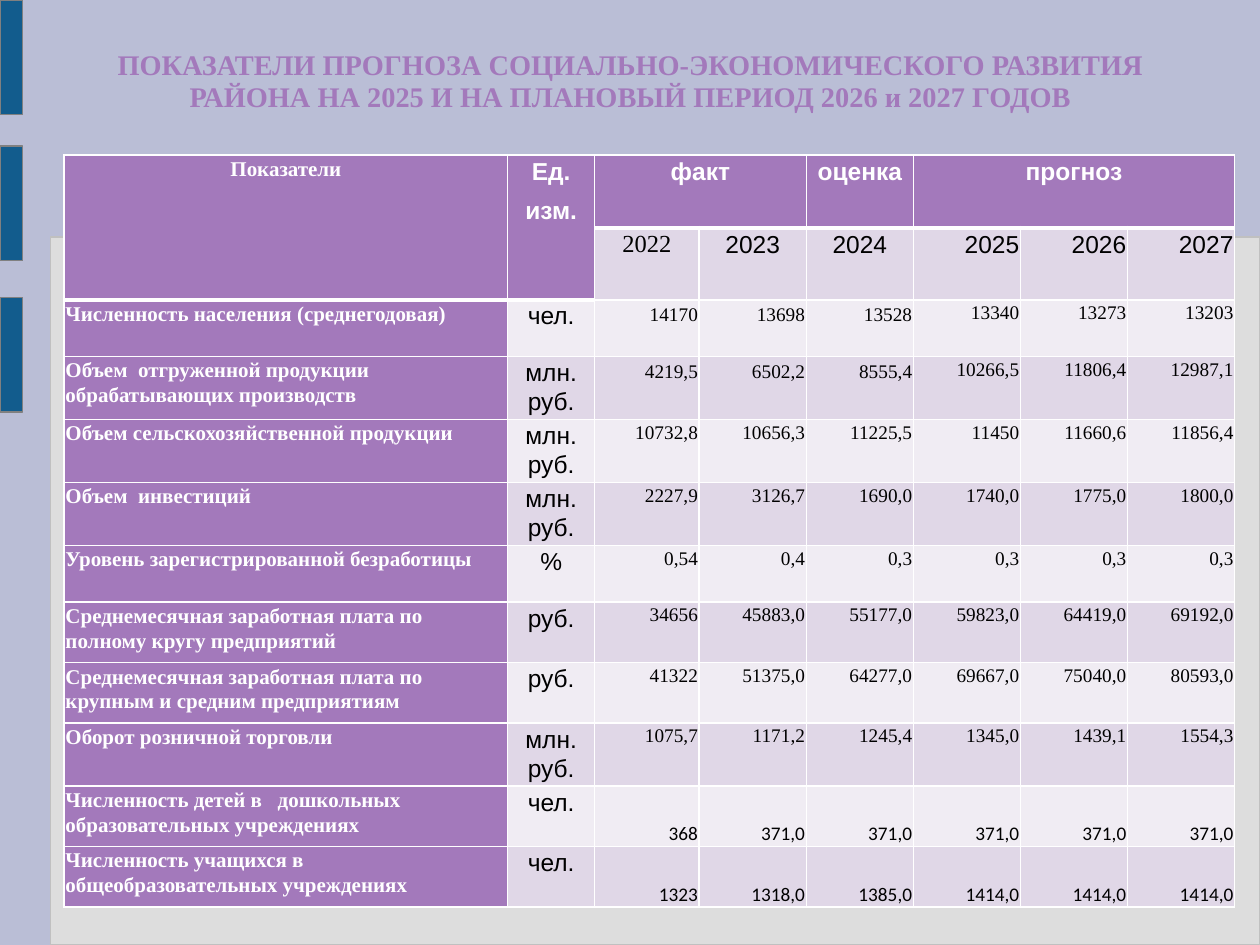
from lxml import etree
from pptx import Presentation
from pptx import util as u
from pptx.dml.color import RGBColor
from pptx.enum import shapes, text
from pptx.oxml import ns

SERIF, SANS, PLAIN = "Times New Roman", "Arial", "Calibri"
PURPLE, WHITE, BLACK = "A379BB", "FFFFFF", "000000"
BANDS = ["F0ECF3", "E0D7E7"]
LEFT, MID, RIGHT = text.PP_ALIGN.LEFT, text.PP_ALIGN.CENTER, text.PP_ALIGN.RIGHT
TOP, LOW = text.MSO_ANCHOR.TOP, text.MSO_ANCHOR.BOTTOM

TITLE = ("ПОКАЗАТЕЛИ ПРОГНОЗА СОЦИАЛЬНО-ЭКОНОМИЧЕСКОГО РАЗВИТИЯ "
         "РАЙОНА НА 2025 И НА ПЛАНОВЫЙ ПЕРИОД 2026 и 2027 ГОДОВ")
# first column, last column, last row, words
HEADS = [(0, 0, 1, "Показатели"), (1, 1, 1, "Ед.\nизм."), (2, 3, 0, "факт"),
         (4, 4, 0, "оценка"), (5, 7, 0, "прогноз")]
YEARS = ["2022", "2023", "2024", "2025", "2026", "2027"]
ROWS = [
    ("Численность населения (среднегодовая)", "чел.",
     "14170 13698 13528 13340 13273 13203"),
    ("Объем  отгруженной продукции обрабатывающих производств", "млн. руб.",
     "4219,5 6502,2 8555,4 10266,5 11806,4 12987,1"),
    ("Объем сельскохозяйственной продукции", "млн. руб.",
     "10732,8 10656,3 11225,5 11450 11660,6 11856,4"),
    ("Объем  инвестиций", "млн. руб.",
     "2227,9 3126,7 1690,0 1740,0 1775,0 1800,0"),
    ("Уровень зарегистрированной безработицы", "%",
     "0,54 0,4 0,3 0,3 0,3 0,3"),
    ("Среднемесячная заработная плата по полному кругу предприятий", "руб.",
     "34656 45883,0 55177,0 59823,0 64419,0 69192,0"),
    ("Среднемесячная заработная плата по крупным и средним предприятиям", "руб.",
     "41322 51375,0 64277,0 69667,0 75040,0 80593,0"),
    ("Оборот розничной торговли", "млн. руб.",
     "1075,7 1171,2 1245,4 1345,0 1439,1 1554,3"),
    ("Численность детей в   дошкольных образовательных учреждениях", "чел.",
     "368 371,0 371,0 371,0 371,0 371,0"),
    ("Численность учащихся в общеобразовательных учреждениях", "чел.",
     "1323 1318,0 1385,0 1414,0 1414,0 1414,0"),
]
# Grid units: the slide is 100 columns by 75 rows
WIDTHS = [35.2, 6.9, 8.3] + [8.5] * 5
HEIGHTS = [5.8, 5.7, 4.5, 5, 5, 5, 4.5, 4.8, 4.8, 5, 4.8, 4.8]


def rgb(code):
    return RGBColor.from_string(code)


def write(frame, words, size=11, font=SERIF, color=BLACK, bold=False,
          align=LEFT, lead=1.06, gap=3):
    """Fill a text frame, one paragraph for each line of words."""
    frame.text = words
    frame.word_wrap = True
    for para in frame.paragraphs:
        para.alignment, para.line_spacing = align, lead
        para.space_before = para.space_after = u.Pt(gap)
        for run in para.runs:
            face = run.font
            face.size, face.name, face.bold = u.Pt(size), font, bold
            face.color.rgb = rgb(color)


def edge(cell, side, width):
    """Draw one white border of a cell; side is L, R, T or B."""
    line = etree.SubElement(cell._tc.get_or_add_tcPr(), ns.qn("a:ln" + side),
                            w=str(u.Pt(width)))
    fill = etree.SubElement(line, ns.qn("a:solidFill"))
    etree.SubElement(fill, ns.qn("a:srgbClr"), val=WHITE)


def thick(row, col):
    """Tell whether the heading of this column ends below this row."""
    return row == (1 if col < 2 else 0)


class Page:
    def __init__(self, deck, back):
        self.wide, self.high = deck.slide_width, deck.slide_height
        self.slide = deck.slides.add_slide(deck.slide_layouts[5])
        self.slide.background.fill.solid()
        self.slide.background.fill.fore_color.rgb = rgb(back)

    def col(self, n):
        return round(self.wide * n / 100)

    def row(self, n):
        return round(self.high * n / 75)

    def area(self, x, y, w, h):
        return self.col(x), self.row(y), self.col(w), self.row(h)

    def panel(self, x, y, w, h, fill, line):
        box = self.slide.shapes.add_shape(
            shapes.MSO_SHAPE.ROUNDED_RECTANGLE, *self.area(x, y, w, h))
        box.adjustments[0] = 0
        box.shadow.inherit = False
        box.fill.solid()
        box.fill.fore_color.rgb = rgb(fill)
        box.line.color.rgb = rgb(line)
        box.line.width = u.Pt(0.75)

    def title(self, words, x, y, w, h):
        head = self.slide.shapes.title
        head.left, head.top, head.width, head.height = self.area(x, y, w, h)
        frame = head.text_frame
        frame.margin_left = frame.margin_right = frame.margin_bottom = 0
        frame.margin_top = self.row(0.3)
        frame.vertical_anchor = TOP
        write(frame, words, size=16.2, color=PURPLE, bold=True, align=MID,
              lead=0.93, gap=0)

    def table(self, x, y, widths, heights):
        grid = self.slide.shapes.add_table(
            len(heights), len(widths),
            *self.area(x, y, sum(widths), sum(heights))).table
        grid.first_row = grid.horz_banding = False
        for part, n in zip(grid.columns, widths):
            part.width = self.col(n)
        for part, n in zip(grid.rows, heights):
            part.height = self.row(n)
        for r in range(len(heights)):
            for c in range(len(widths)):
                cell = grid.cell(r, c)
                for side in "LR":
                    edge(cell, side, 1)
                edge(cell, "T", 3 if thick(r - 1, c) else 1)
                edge(cell, "B", 3 if thick(r, c) else 1)
        return grid

    def cell(self, grid, r, c, words, fill, anchor=TOP, **style):
        box = grid.cell(r, c)
        box.margin_left = box.margin_right = self.col(0.1)
        box.margin_top = box.margin_bottom = self.row(0.1)
        box.vertical_anchor = anchor
        box.fill.solid()
        box.fill.fore_color.rgb = rgb(fill)
        write(box.text_frame, words, **style)


def main():
    deck = Presentation()
    deck.slide_width, deck.slide_height = u.Inches(10), u.Inches(7.5)
    page = Page(deck, "BABED6")
    page.panel(4, 18.8, 96, 56.2, "DDDDDD", "C0C0C0")
    for y in (0, 11.6, 23.6):
        page.panel(0, y, 1.8, 9.1, "125C8D", "808080")
    page.title(TITLE, 5, 3.7, 90, 7.8)

    grid = page.table(5.1, 12.3, WIDTHS, HEIGHTS)
    for first, last, end, words in HEADS:
        if (first, 0) != (last, end):
            grid.cell(0, first).merge(grid.cell(end, last))
        size, font = (14, SANS) if first else (12, SERIF)
        page.cell(grid, 0, first, words, PURPLE, size=size, font=font,
                  color=WHITE, bold=True, align=MID)
    for c, year in enumerate(YEARS, 2):
        page.cell(grid, 1, c, year, BANDS[1], size=14,
                  font=SERIF if c == 2 else SANS, align=MID if c < 5 else RIGHT)

    for r, (name, unit, values) in enumerate(ROWS, 2):
        band = BANDS[r % 2]
        page.cell(grid, r, 0, name, PURPLE, size=12, color=WHITE, bold=True)
        page.cell(grid, r, 1, unit, band, size=14, font=SANS, align=MID)
        for c, value in enumerate(values.split(), 2):
            if r >= 10:
                style = dict(font=PLAIN, anchor=LOW, lead=0.93, gap=0)
            else:
                style = dict(lead=1.15 if r < 4 and c < 5 else 1.06)
            page.cell(grid, r, c, value, band, align=RIGHT, **style)
    deck.save("out.pptx")


if __name__ == "__main__":
    main()
